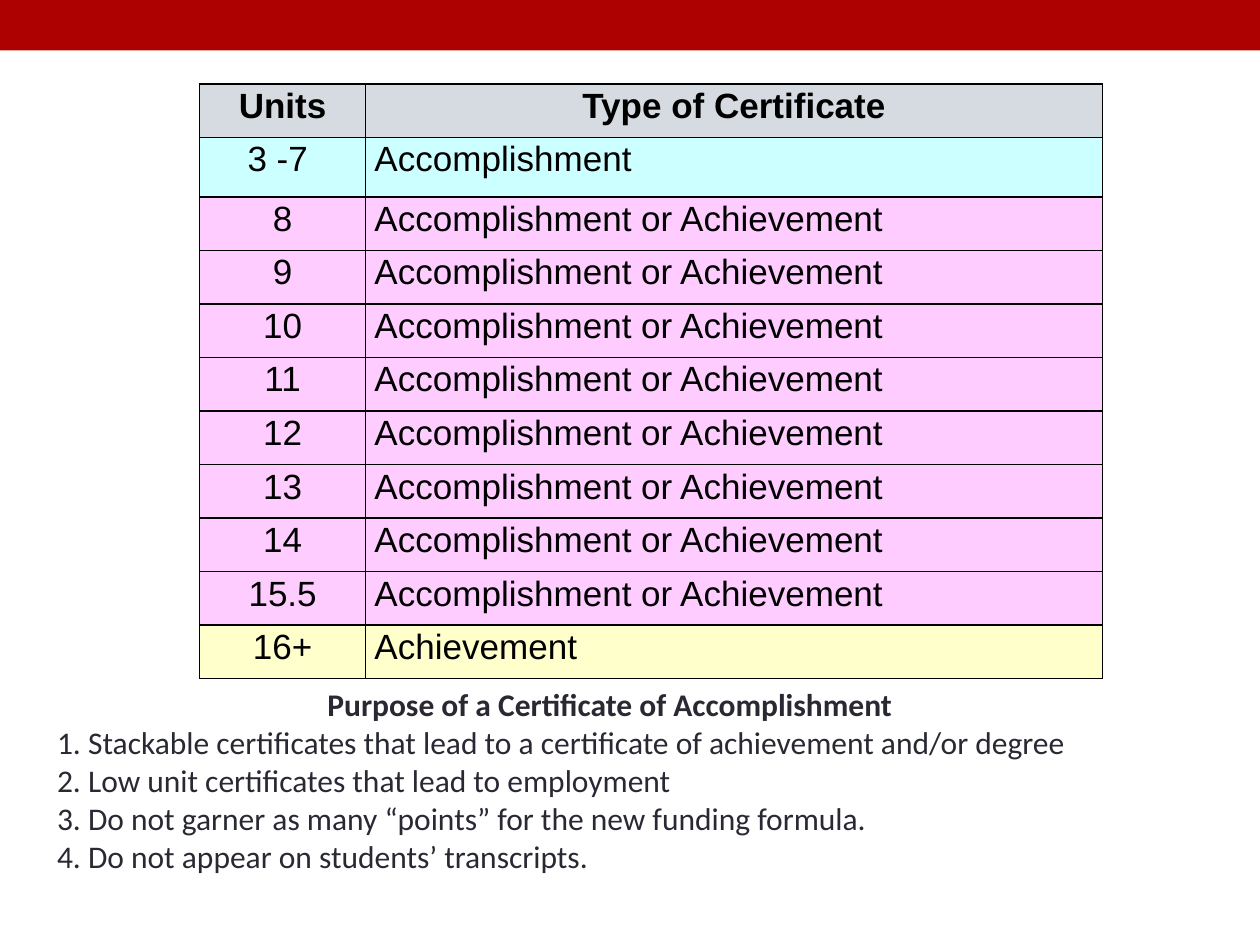
from pptx import Presentation
from pptx.dml.color import RGBColor
from pptx.enum.shapes import MSO_SHAPE as Shape
from pptx.enum.text import MSO_ANCHOR as Anchor, MSO_AUTO_SIZE as Fit, PP_ALIGN as Align
from pptx.oxml import parse_xml
from pptx.oxml.ns import nsdecls
from pptx.util import Pt

BOTH = "Accomplishment or Achievement"
ROWS = [
    ("Units", "Type of Certificate", "D6DBE1"),
    ("3 -7 ", "Accomplishment", "CCFFFF"),
    *[(unit, BOTH, "FFCCFF") for unit in "8 9 10 11 12 13 14 15.5".split()],
    ("16+", "Achievement", "FFFFCC"),
]
HEAD = "Purpose of a Certificate of Accomplishment"
NOTES = [
    "1. Stackable certificates that lead to a certificate of achievement and/or degree",
    "2. Low unit certificates that lead to employment",
    "3. Do not garner as many “points” for the new funding formula.",
    "4. Do not appear on students’ transcripts.",
]


def color(code):
    return RGBColor.from_string(code)


def paint(item, code):
    item.fill.solid()
    item.fill.fore_color.rgb = color(code)


def write(para, text, font="Calibri", size=18, ink="292934", bold=False,
          align=Align.LEFT, space=1.0):
    para.alignment = align
    para.line_spacing = space
    para.space_before = para.space_after = Pt(0)
    run = para.add_run()
    run.text = text
    run.font.name = font
    run.font.size = Pt(size)
    run.font.bold = bold
    run.font.color.rgb = color(ink)


def border(cell, width=1):
    props = cell._tc.get_or_add_tcPr()
    for spot, side in enumerate(("lnL", "lnR", "lnT", "lnB")):
        props.insert(spot, parse_xml(
            f'<a:{side} {nsdecls("a")} w="{Pt(width)}"><a:solidFill>'
            f'<a:srgbClr val="000000"/></a:solidFill></a:{side}>'))


def add_band(slide, x, y, w, h):
    band = slide.shapes.add_shape(Shape.RECTANGLE, Pt(x), Pt(y), Pt(w), Pt(h))
    band.shadow.inherit = False
    paint(band, "AD0101")
    band.line.fill.background()


def add_units(slide, x, y, w, h):
    frame = slide.shapes.add_table(len(ROWS), 2, Pt(x), Pt(y), Pt(w), Pt(h))
    table = frame.table
    left, tall = 95, 34
    table.columns[0].width = Pt(left)
    table.columns[1].width = Pt(w - left)
    # The second row is a little taller than the rest
    for i, row in enumerate(table.rows):
        row.height = Pt(tall if i == 1 else (h - tall) / (len(ROWS) - 1))
    for i, (*texts, fill) in enumerate(ROWS):
        for j, text in enumerate(texts):
            cell = table.cell(i, j)
            cell.margin_left = cell.margin_right = Pt(5)
            cell.margin_top = cell.margin_bottom = Pt(0)
            paint(cell, fill)
            border(cell)
            mid = i == 0 or j == 0
            write(cell.text_frame.paragraphs[0], text, font="Arial", size=20,
                  ink="000000", bold=i == 0, space=1.07,
                  align=Align.CENTER if mid else Align.LEFT)


def add_notes(slide, x, y, w, h):
    body = slide.placeholders[1]
    body.left, body.top, body.width, body.height = Pt(x), Pt(y), Pt(w), Pt(h)
    frame = body.text_frame
    frame.word_wrap = True
    frame.auto_size = Fit.NONE
    frame.vertical_anchor = Anchor.TOP
    for i, text in enumerate([HEAD, *NOTES]):
        para = frame.paragraphs[0] if i == 0 else frame.add_paragraph()
        write(para, text, bold=i == 0)
        # The heading is indented, and no line has a bullet
        props = para._p.get_or_add_pPr()
        props.set("marL", str(Pt(154.5 if i == 0 else 0)))
        props.set("indent", "0")
        props.append(parse_xml(f'<a:buNone {nsdecls("a")}/>'))


def main():
    deck = Presentation()
    deck.slide_width, deck.slide_height = Pt(720), Pt(540)
    slide = deck.slides.add_slide(deck.slide_layouts[1])
    title = slide.shapes.title.element
    title.getparent().remove(title)  # this slide has no title
    add_band(slide, 0, 0, 720, 28.8)
    add_notes(slide, 25.4, 388, 674, 138)
    add_units(slide, 114, 48, 516, 340)
    deck.save("out.pptx")


if __name__ == "__main__":
    main()
